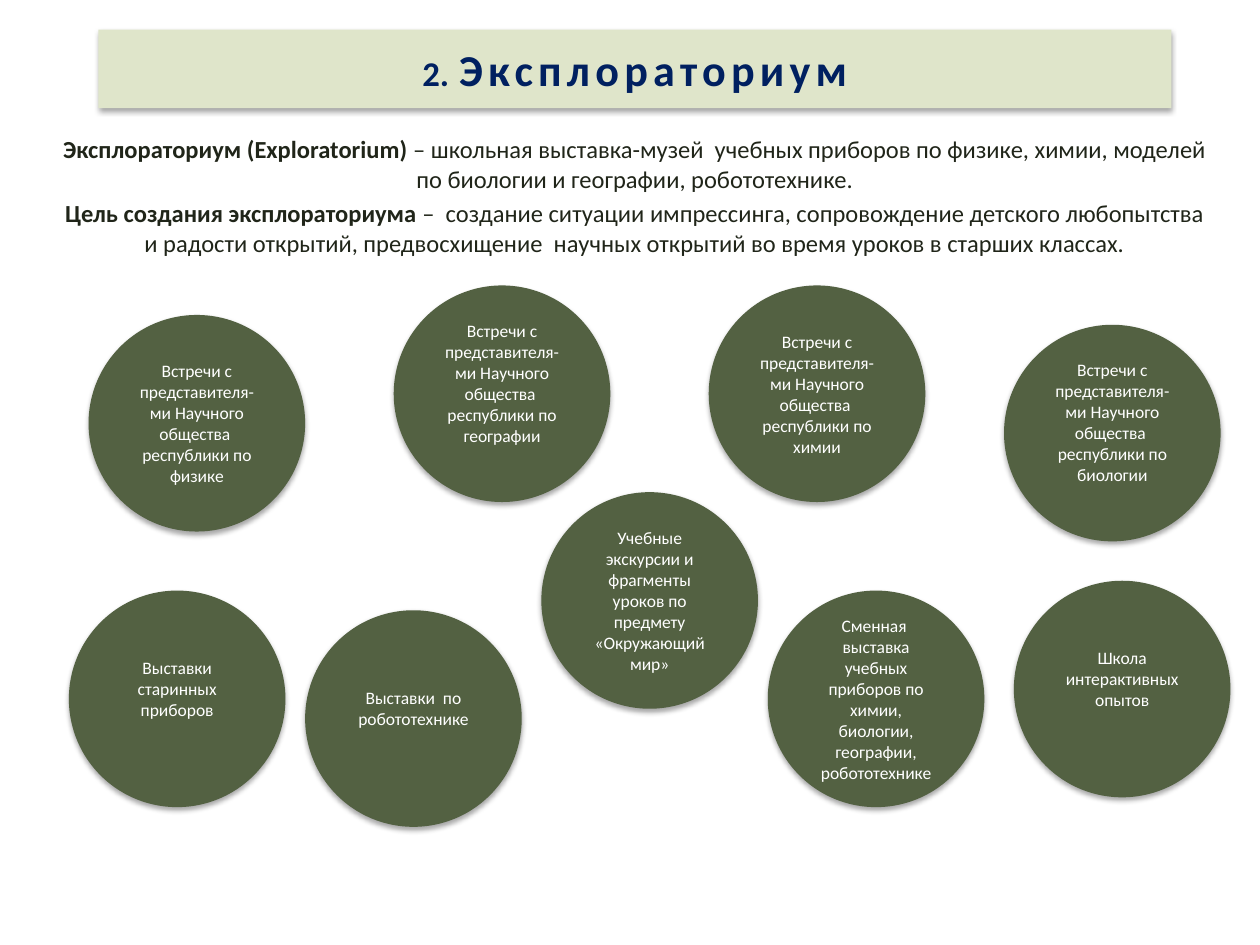
from lxml import etree
from pptx import Presentation, util as u
from pptx.dml.color import RGBColor
from pptx.enum import shapes, text
from pptx.oxml.ns import qn

COLUMNS, ROWS = 128, 96
DIAMETER = 22
MEETING = "Встречи с представителя-ми Научного общества  республики по "

# Column, row, text, whether the text sits half a line above the centre
CIRCLES = [
    (78, 60, "Сменная  выставка учебных приборов по химии, биологии, "
             "географии, робототехнике", False),
    (9, 32, MEETING + "физике", False),
    (72, 29, MEETING + "химии", False),
    (7, 60, "Выставки старинных приборов", True),
    (102, 33, MEETING + "биологии", True),
    (40, 29, MEETING + "географии", True),
    (103, 59, "Школа интерактивных опытов", True),
    (55, 50, "Учебные экскурсии и фрагменты уроков по предмету "
             "«Окружающий мир»", False),
    (31, 62, "Выставки  по робототехнике", True),
]

INTRODUCTION = [
    ("Эксплораториум (Exploratorium) ",
     "– школьная выставка-музей  учебных приборов по физике, химии, моделей "
     "по биологии и географии, робототехнике."),
    ("Цель создания эксплораториума ",
     "–  создание ситуации импрессинга, сопровождение детского любопытства "
     "и радости открытий, предвосхищение  научных открытий во время уроков "
     "в старших классах."),
]


def color(value):
    return RGBColor.from_string(value)


class SlideBuilder:
    font = "Calibri"
    navy, ink, white = "002060", "202519", "FFFFFF"
    banner_fill, circle_fill = "DFE5CA", "536142"

    def __init__(self, presentation):
        self.slide = presentation.slides.add_slide(presentation.slide_layouts[5])
        self.column = presentation.slide_width / COLUMNS
        self.row = presentation.slide_height / ROWS

    def box(self, left, top, width, height):
        """Turn grid columns and rows into slide lengths."""
        return (round(left * self.column), round(top * self.row),
                round(width * self.column), round(height * self.row))

    def add_run(self, paragraph, words, size, ink, bold=False):
        run = paragraph.add_run()
        run.text = words
        run.font.name, run.font.size, run.font.bold = self.font, u.Pt(size), bold
        run.font.color.rgb = color(ink)
        return run

    def style_surface(self, shape, fill):
        """Give a shape a plain fill, a soft shadow below and middle-anchored text."""
        shape.fill.solid()
        shape.fill.fore_color.rgb = color(fill)
        shape.line.fill.background()
        shape.shadow.inherit = False
        effects = shape._element.spPr.find(qn("a:effectLst"))
        shadow = etree.SubElement(effects, qn("a:outerShdw"), blurRad=str(u.Pt(3.1)),
                                  dist=str(u.Pt(1.8)), dir="5400000", rotWithShape="0")
        shade = etree.SubElement(shadow, qn("a:srgbClr"), val="000000")
        etree.SubElement(shade, qn("a:alpha"), val="35000")
        shape.text_frame.word_wrap = True
        shape.text_frame.vertical_anchor = text.MSO_ANCHOR.MIDDLE

    def title(self, number, words, *place):
        shape = self.slide.shapes.title
        shape.left, shape.top, shape.width, shape.height = self.box(*place)
        self.style_surface(shape, self.banner_fill)
        shape.text_frame.auto_size = text.MSO_AUTO_SIZE.NONE
        paragraph = shape.text_frame.paragraphs[0]
        paragraph.alignment = text.PP_ALIGN.CENTER
        self.add_run(paragraph, number, 19.8, self.navy, True)
        for part in (" ", words):
            run = self.add_run(paragraph, part, 25.2, self.navy, True)
        run.font._element.set("spc", "300")

    def introduction(self, entries, *place):
        frame = self.slide.shapes.add_textbox(*self.box(*place)).text_frame
        frame.word_wrap = True
        for index, (term, explanation) in enumerate(entries):
            paragraph = frame.add_paragraph() if index else frame.paragraphs[0]
            paragraph.alignment = text.PP_ALIGN.CENTER
            paragraph.space_before = u.Pt(3 if index else 0)
            self.add_run(paragraph, term, 14, self.ink, True)
            self.add_run(paragraph, explanation, 14, self.ink)

    def circle(self, left, top, words, raised):
        shape = self.slide.shapes.add_shape(
            shapes.MSO_SHAPE.OVAL, *self.box(left, top, DIAMETER, DIAMETER))
        self.style_surface(shape, self.circle_fill)
        if raised:
            shape.text_frame.margin_bottom = u.Inches(0.22)
        paragraph = shape.text_frame.paragraphs[0]
        paragraph.alignment = text.PP_ALIGN.CENTER
        self.add_run(paragraph, words, 10, self.white)


def main():
    presentation = Presentation()
    presentation.slide_width, presentation.slide_height = u.Inches(10), u.Inches(7.5)
    builder = SlideBuilder(presentation)
    builder.title("2.", "Эксплораториум", 10, 3, 109, 8)
    builder.introduction(INTRODUCTION, 5, 13, 119, 76)
    for circle in CIRCLES:
        builder.circle(*circle)
    presentation.save("out.pptx")


if __name__ == "__main__":
    main()
